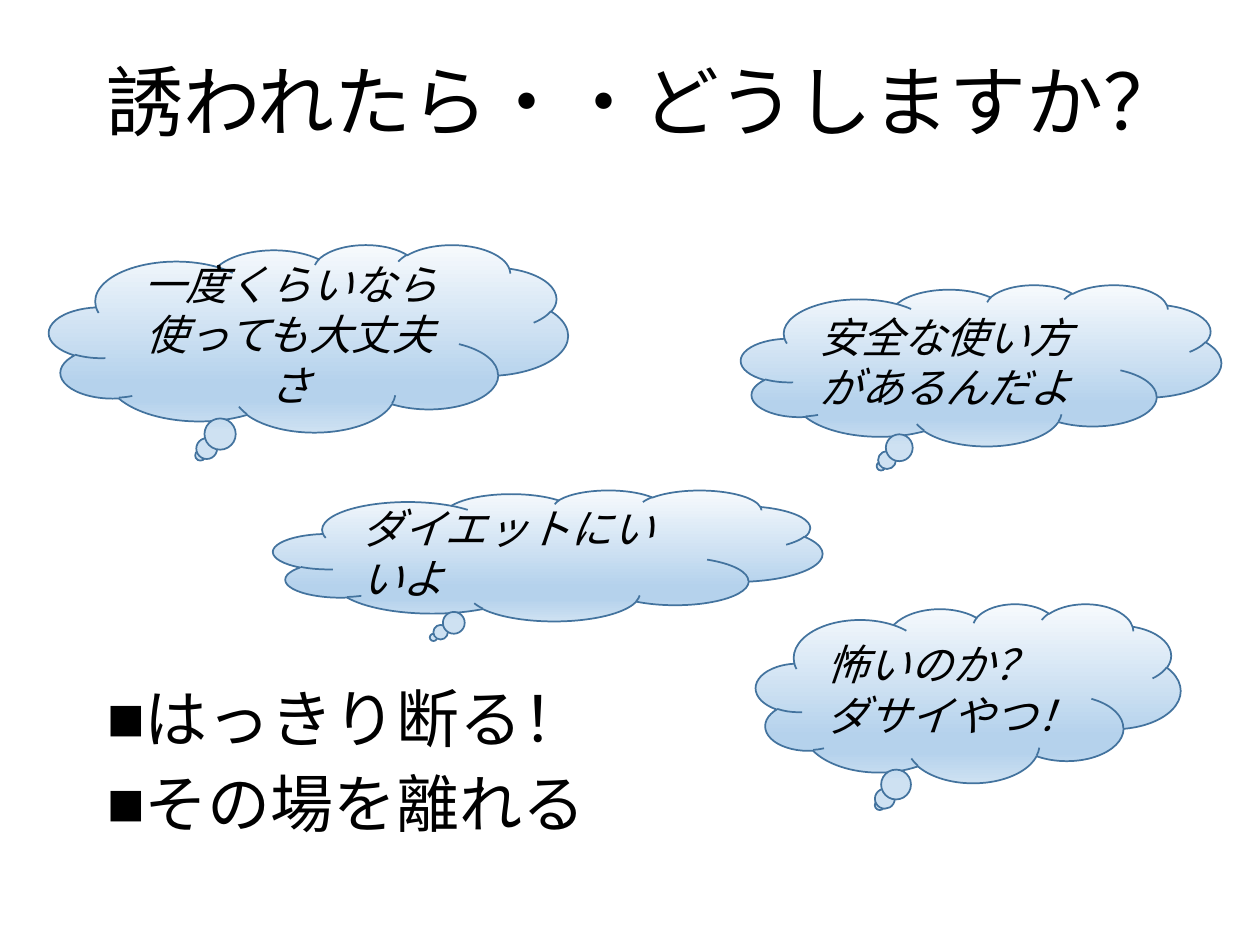
from lxml import etree
from pptx import Presentation
from pptx import util as u
from pptx.dml.color import RGBColor
from pptx.enum import shapes, text
from pptx.oxml.ns import qn

BLACK = RGBColor(0x00, 0x00, 0x00)
OUTLINE = RGBColor(0x43, 0x73, 0x9E)
PALE = RGBColor(0xF7, 0xFA, 0xFD)
SKY = RGBColor(0xB5, 0xD2, 0xEC)
MIST = RGBColor(0xCE, 0xE1, 0xF2)
CLOUD_STOPS = ((0, PALE), (74, SKY), (83, SKY), (100, MIST))

LEFT, CENTER = text.PP_ALIGN.LEFT, text.PP_ALIGN.CENTER
TITLE = "誘われたら・・どうしますか？"
TITLE_BOX = (1.9, 0.53, 21.6, 3.18)
ANSWERS = ("はっきり断る！", "その場を離れる")
ANSWERS_BOX = (1.9, 13.74, 22.23, 3.71)
TEMPTATIONS = (
    (("一度くらいなら使っても大丈夫さ",), (0.99, 4.93, 10.46, 3.78), CENTER),
    (("ダイエットにいいよ",), (5.51, 9.88, 11.07, 2.64), LEFT),
    (("安全な使い方があるんだよ",), (14.94, 5.74, 9.68, 3.25), LEFT),
    (("怖いのか？", "ダサイやつ！"), (15.24, 12.17, 8.56, 3.61), LEFT),
)


def apply_format(target, values):
    """Set each named attribute of the target."""
    for name, value in values.items():
        setattr(target, name, value)


def place(shape, box):
    """Move and size a shape to a box in centimetres."""
    names = ("left", "top", "width", "height")
    apply_format(shape, dict(zip(names, map(u.Cm, box))))


def write(shape, lines, frame_format, paragraph_format, font_format):
    """Fill a shape with formatted paragraphs."""
    frame = shape.text_frame
    frame.text = "\n".join(lines)
    apply_format(frame, {"word_wrap": True,
                         "auto_size": text.MSO_AUTO_SIZE.NONE, **frame_format})
    for paragraph in frame.paragraphs:
        apply_format(paragraph, paragraph_format)
        for run in paragraph.runs:
            apply_format(run.font, {"name": "Calibri", **font_format})
            run.font.color.rgb = BLACK


def add_title(slide, box):
    """Place the question in the title placeholder."""
    title = slide.shapes.title
    place(title, box)
    write(title, [TITLE], {"vertical_anchor": text.MSO_ANCHOR.MIDDLE},
          {"alignment": LEFT, "line_spacing": 0.9}, {"size": u.Pt(44)})


def add_answers(slide, box):
    """Place the square-bulleted answers in the body placeholder."""
    body = slide.placeholders[1]
    place(body, box)
    write(body, ANSWERS, {"vertical_anchor": text.MSO_ANCHOR.TOP},
          {"alignment": LEFT, "line_spacing": 0.9, "space_before": u.Pt(10)},
          {"size": u.Pt(36)})
    indent = u.Cm(0.64)
    for paragraph in body.text_frame.paragraphs:
        properties = paragraph._p.get_or_add_pPr()
        properties.set("marL", str(indent))
        properties.set("indent", str(-indent))
        etree.SubElement(properties, qn("a:buChar"), char="■")


def fill_gradient(shape, stops):
    """Fill a shape from top to bottom with the given stops."""
    shape.fill.gradient()
    shape.fill.gradient_angle = 270
    stop_list = shape._element.spPr.find(".//" + qn("a:gsLst"))
    for stop in list(stop_list):
        stop_list.remove(stop)
    for percent, color in stops:
        stop = etree.SubElement(stop_list, qn("a:gs"), pos=str(percent * 1000))
        etree.SubElement(stop, qn("a:srgbClr"), val=str(color))


def add_temptation(slide, lines, box, alignment):
    """Add one thought cloud with its words."""
    cloud = slide.shapes.add_shape(
        shapes.MSO_SHAPE.CLOUD_CALLOUT, *map(u.Cm, box))
    cloud.shadow.inherit = False
    fill_gradient(cloud, CLOUD_STOPS)
    cloud.line.color.rgb = OUTLINE
    cloud.line.width = u.Pt(1)
    write(cloud, lines, {"vertical_anchor": text.MSO_ANCHOR.MIDDLE},
          {"alignment": alignment}, {"size": u.Pt(24), "italic": True})


def main():
    """Build and save the slide."""
    presentation = Presentation()
    presentation.slide_width = u.Cm(25.4)
    presentation.slide_height = u.Cm(19.05)
    slide = presentation.slides.add_slide(presentation.slide_layouts[1])
    add_title(slide, TITLE_BOX)
    add_answers(slide, ANSWERS_BOX)
    for lines, box, alignment in TEMPTATIONS:
        add_temptation(slide, lines, box, alignment)
    presentation.save("out.pptx")


if __name__ == "__main__":
    main()
